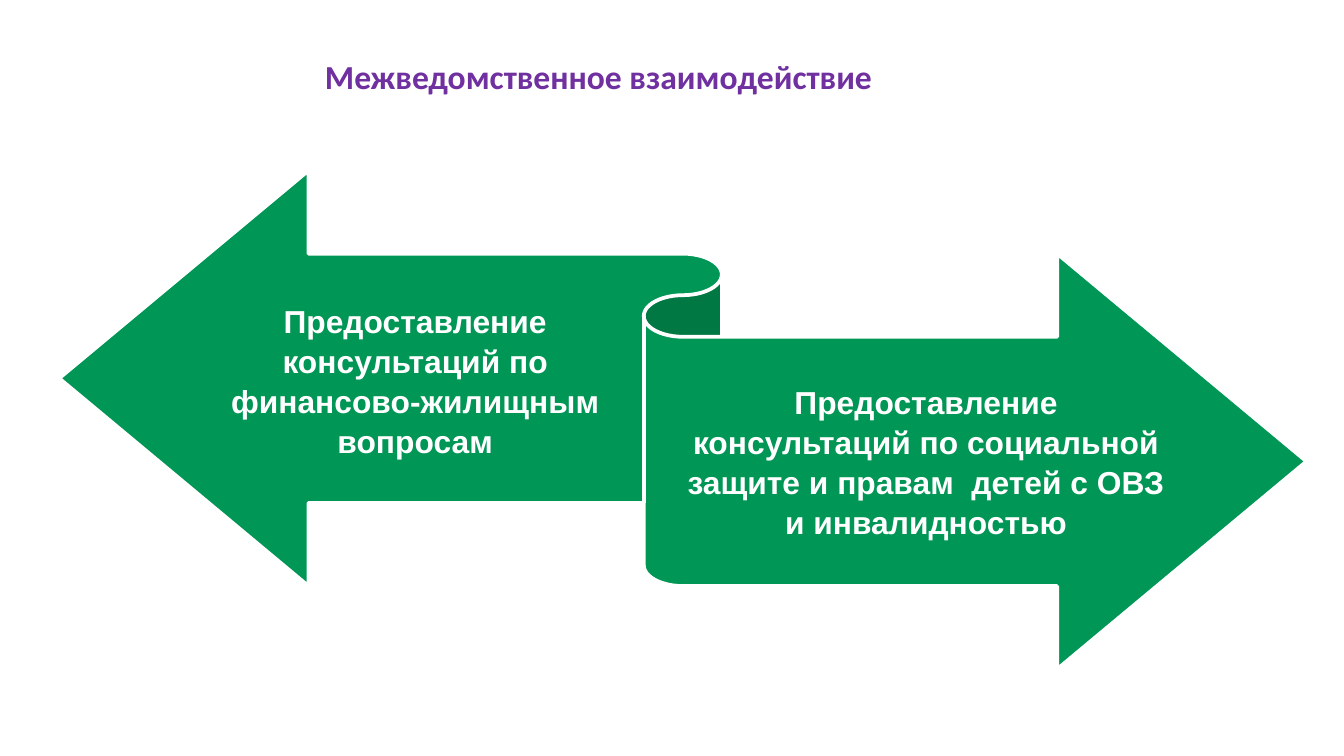
from pptx import Presentation
from pptx.dml.color import RGBColor
from pptx.enum.shapes import MSO_SHAPE
from pptx.enum.text import MSO_ANCHOR, PP_ALIGN
from pptx.util import Pt


def color(value):
    return RGBColor.from_string(value)


def write_text(shape, text, frame_format, font_format, font_color):
    frame = shape.text_frame
    for name, value in frame_format.items():
        setattr(frame, name, value)
    paragraph = frame.paragraphs[0]
    paragraph.text = text
    paragraph.alignment = PP_ALIGN.CENTER
    for name, value in font_format.items():
        setattr(paragraph.font, name, value)
    paragraph.font.color.rgb = color(font_color)


presentation = Presentation()
presentation.slide_width, presentation.slide_height = Pt(720), Pt(405)
slide = presentation.slides.add_slide(presentation.slide_layouts[5])

# Title
title = slide.shapes.title
title.left, title.top, title.width, title.height = Pt(49.7), Pt(30.2), Pt(542), Pt(54)
title_frame = {
    "word_wrap": True, "vertical_anchor": MSO_ANCHOR.TOP,
    "margin_left": 0, "margin_right": 0, "margin_top": 0, "margin_bottom": 0,
}
title_font = {"name": "Calibri", "size": Pt(18), "bold": True}
write_text(title, "Межведомственное взаимодействие", title_frame, title_font, "7030A0")

# Two-way ribbon
group = slide.shapes.add_group_shape()
ribbon = group.shapes.add_shape(
    MSO_SHAPE.LEFT_RIGHT_RIBBON, Pt(31.7), Pt(91.4), Pt(668.2), Pt(267.1))
ribbon.shadow.inherit = False
ribbon.fill.solid()
ribbon.fill.fore_color.rgb = color("009655")
ribbon.line.color.rgb = color("FFFFFF")
ribbon.line.width = Pt(2)

# Labels on the two arrows
label_frame = {
    "word_wrap": True, "vertical_anchor": MSO_ANCHOR.MIDDLE,
    "margin_left": 0, "margin_right": 0, "margin_top": Pt(5), "margin_bottom": Pt(5),
}
label_font = {"name": "Arial", "size": Pt(17), "bold": True}
labels = [
    (112.3, 138.2, 220.3, "Предоставление консультаций по финансово-жилищным вопросам"),
    (365.8, 181.4, 260.6,
     "Предоставление консультаций по социальной защите и правам  детей с ОВЗ и инвалидностью"),
]
for left, top, width, text in labels:
    label = group.shapes.add_textbox(Pt(left), Pt(top), Pt(width), Pt(131))
    write_text(label, text, label_frame, label_font, "FFFFFF")
    label.text_frame.paragraphs[0].line_spacing = 1.05

presentation.save("out.pptx")
